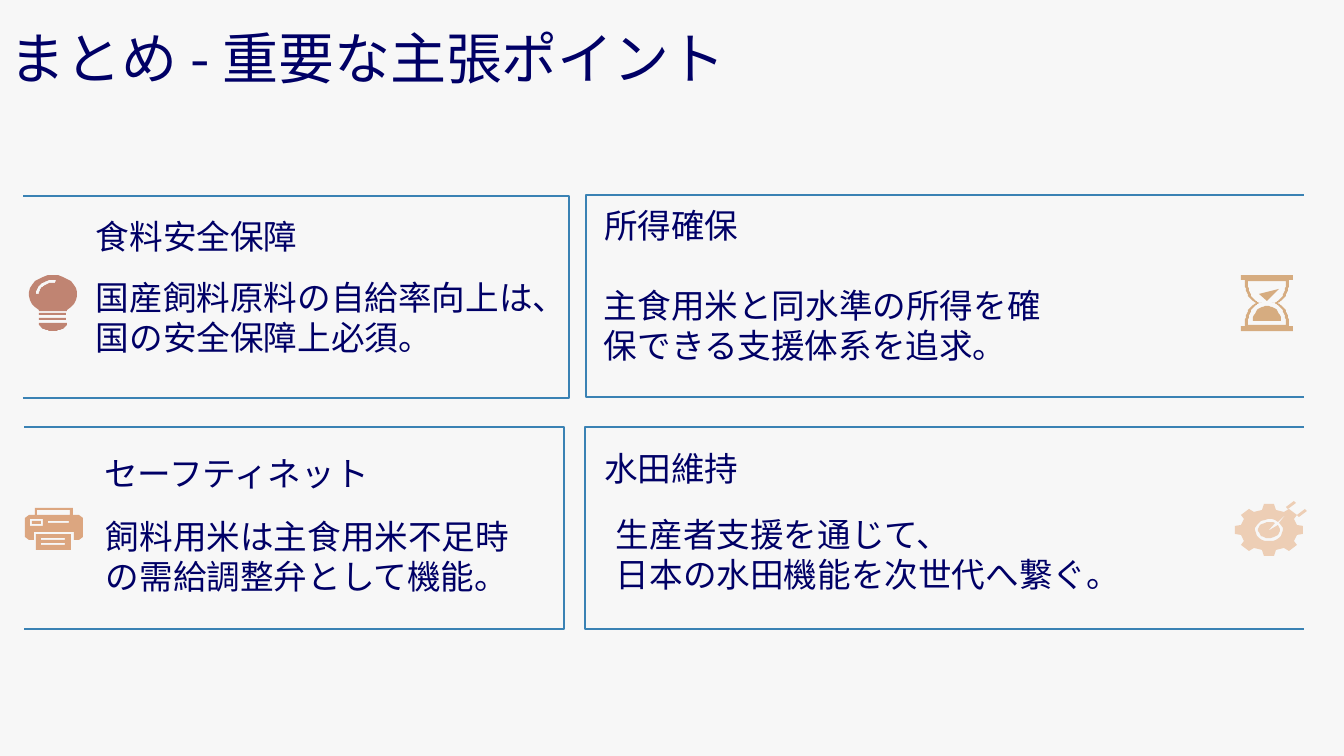
"""Build the summary slide: four open frames with messages and icons."""
import math

import pptx
import pptx.dml.color
import pptx.enum.shapes
import pptx.enum.text
import pptx.oxml
import pptx.oxml.ns
import pptx.util

PX = 914400 / 100.8
THEME = {
    "font": "Noto Sans CJK JP", "title": 40, "body": 24, "line": 2,
    "bg": "F7F7F7", "text": "000066", "frame": "3A82B4",
    "gear": "EDCEB5", "bulb": "C08472", "hourglass": "D6AC80", "printer": "DCA680",
}
TITLE = ("まとめ - 重要な主張ポイント", (0, 18, 1168, 98))
FRAME_H = 202
HEAD_SIZE = (366, 44)
CARDS = [
    {"frame": (23, 569, 196), "head": ("食料安全保障", (96, 214)),
     "body": ("国産飼料原料の自給率向上は、\v国の安全保障上必須。", (96, 277, 539, 86))},
    {"frame": (1304, 586, 195), "head": ("所得確保", (604, 203)),
     "body": ("主食用米と同水準の所得を確保できる支援体系を追求。", (604, 285, 457, 108))},
    {"frame": (24, 564, 427), "head": ("セーフティネット", (104, 451)),
     "body": ("飼料用米は主食用米不足時\vの需給調整弁として機能。", (106, 516, 596, 78))},
    {"frame": (1304, 585, 427), "head": ("水田維持", (604, 446)),
     "body": ("生産者支援を通じて、\v日本の水田機能を次世代へ繋ぐ。", (616, 514, 608, 120))},
]


def arc(center, rx, ry, start, end, steps=24):
    angles = [math.radians(start + (end - start) * i / steps) for i in range(steps + 1)]
    return [(center[0] + rx * math.cos(a), center[1] + ry * math.sin(a)) for a in angles]


def box(x0, y0, x1, y1):
    return [(x0, y0), (x1, y0), (x1, y1), (x0, y1)]


def mirror_x(half, axis):
    return half + [(2 * axis - x, y) for x, y in reversed(half)]


def mirror_y(half, axis):
    return half + [(x, 2 * axis - y) for x, y in reversed(half)]


def gear_parts(center=(1269, 530), teeth=8):
    rim = []
    for k in range(teeth):
        turn = 360 / teeth * k
        for rx, ry, offset in ((29, 21, -14), (34, 26, -9), (34, 26, 9), (29, 21, 14)):
            rim += arc(center, rx, ry, turn + offset, turn + offset, 1)[:1]
    ring = arc(center, 14, 11, -42, 310) + [(1287, 513)]
    target = arc(center, 11, 8, -57, -395) + [(1268, 531)]
    streak = [(1286, 507), (1294, 501), (1296, 503), (1288, 509)]
    shifted = [(x + 11, y + 8) for x, y in streak]
    return [[streak], [shifted], [rim, ring], [target]]


def bulb_parts(center=(53, 294)):
    glass = arc(center, 24, 19, 125, 415) + [(67, 311), (39, 311)]
    shine = arc(center, 17, 14, 180, 280) + arc(center, 14, 11, 280, 180)
    base = arc((53, 323), 14, 8, 0, 180)
    bands = [(39, y, 27, 2) for y in (313, 318)]
    return [[glass, shine], bands[0], [base], bands[1]]


def hourglass_parts(center=(1267, 303)):
    corner = [(1293, 275), (1293, 280), (1289, 280)]
    outer = corner + arc((1275, 281), 14, 22, 0, 90)
    inner = arc((1272, 281), 14, 22, 0, 90)
    case = [mirror_x(mirror_y(side, center[1]), center[0]) for side in (outer, inner)]
    upper_sand = [(1279, 289), (1259, 294), (1267, 301)]
    lower_sand = arc((1267, 321), 14, 15, 180, 360)
    return [case, [upper_sand], [lower_sand]]


def printer_parts():
    paper = [box(36, 534, 71, 550)] + [box(41, y, 65, y + 2) for y in (538, 543)]
    half = [(73, 508), (73, 515), (79, 515), (83, 518), (83, 537), (79, 540), (74, 540), (74, 532)]
    body = [mirror_x(half, 54), box(37, 510, 70, 515), box(30, 519, 43, 526), box(48, 521, 69, 523)]
    return [(32, 521, 9, 3), paper, body]


ICONS = {"gear": gear_parts, "bulb": bulb_parts,
         "hourglass": hourglass_parts, "printer": printer_parts}


def px(n):
    return pptx.util.Emu(round(n * PX))


def color(key):
    return pptx.dml.color.RGBColor.from_string(THEME[key])


def add_text(s, text, at, size="body", insets=(0, 0, 0, 0), middle=False):
    tf = s.shapes.add_textbox(*map(px, at)).text_frame
    tf.word_wrap = True
    tf.margin_left, tf.margin_top, tf.margin_right, tf.margin_bottom = map(px, insets)
    anchor = pptx.enum.text.MSO_ANCHOR
    tf.vertical_anchor = anchor.MIDDLE if middle else anchor.TOP
    p = tf.paragraphs[0]
    p.text = text
    for r in p.runs:
        r.font.size = pptx.util.Pt(THEME[size])
        r.font.name = THEME["font"]
        r.font.color.rgb = color("text")
        ea = pptx.oxml.parse_xml(f'<a:ea {pptx.oxml.ns.nsdecls("a")} typeface="{THEME["font"]}"/>')
        r.font._element.append(ea)


def add_outline(s, contours, close=True):
    fb = s.shapes.build_freeform(*contours[0][0], scale=PX)
    fb.add_line_segments(contours[0][1:], close=close)
    for contour in contours[1:]:
        fb.move_to(*contour[0])
        fb.add_line_segments(contour[1:], close=close)
    sp = fb.convert_to_shape()
    sp.shadow.inherit = False
    return sp


def add_frame(s, outer, inner, top):
    bottom = top + FRAME_H
    sp = add_outline(s, [[(outer, bottom), (inner, bottom), (inner, top), (outer, top)]], close=False)
    sp.fill.background()
    sp.line.color.rgb = color("frame")
    sp.line.width = pptx.util.Pt(THEME["line"])


def add_icon(s, name):
    for part in ICONS[name]():
        if isinstance(part, tuple):
            sp = s.shapes.add_shape(pptx.enum.shapes.MSO_SHAPE.RECTANGLE, *map(px, part))
            sp.shadow.inherit = False
        else:
            sp = add_outline(s, part)
        sp.fill.solid()
        sp.fill.fore_color.rgb = color(name)
        sp.line.fill.background()


def main():
    prs = pptx.Presentation()
    prs.slide_width, prs.slide_height = px(1344), px(756)
    s = prs.slides.add_slide(prs.slide_layouts[6])
    s.background.fill.solid()
    s.background.fill.fore_color.rgb = color("bg")
    add_text(s, *TITLE, size="title", insets=(10, 5, 10, 0))
    for card in CARDS:
        add_frame(s, *card["frame"])
        add_text(s, *card["body"])
        head, at = card["head"]
        add_text(s, head, at + HEAD_SIZE, middle=True)
    for name in ICONS:
        add_icon(s, name)
    prs.save("out.pptx")


if __name__ == "__main__":
    main()
